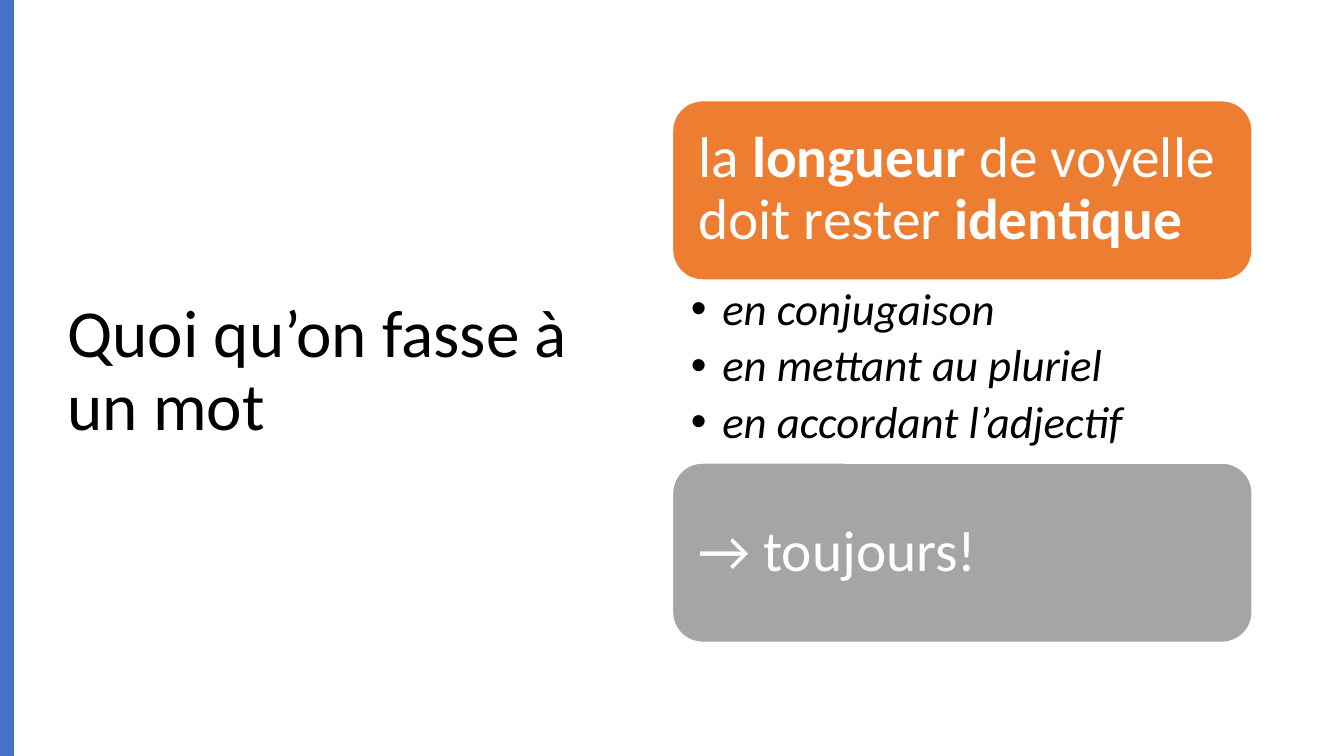
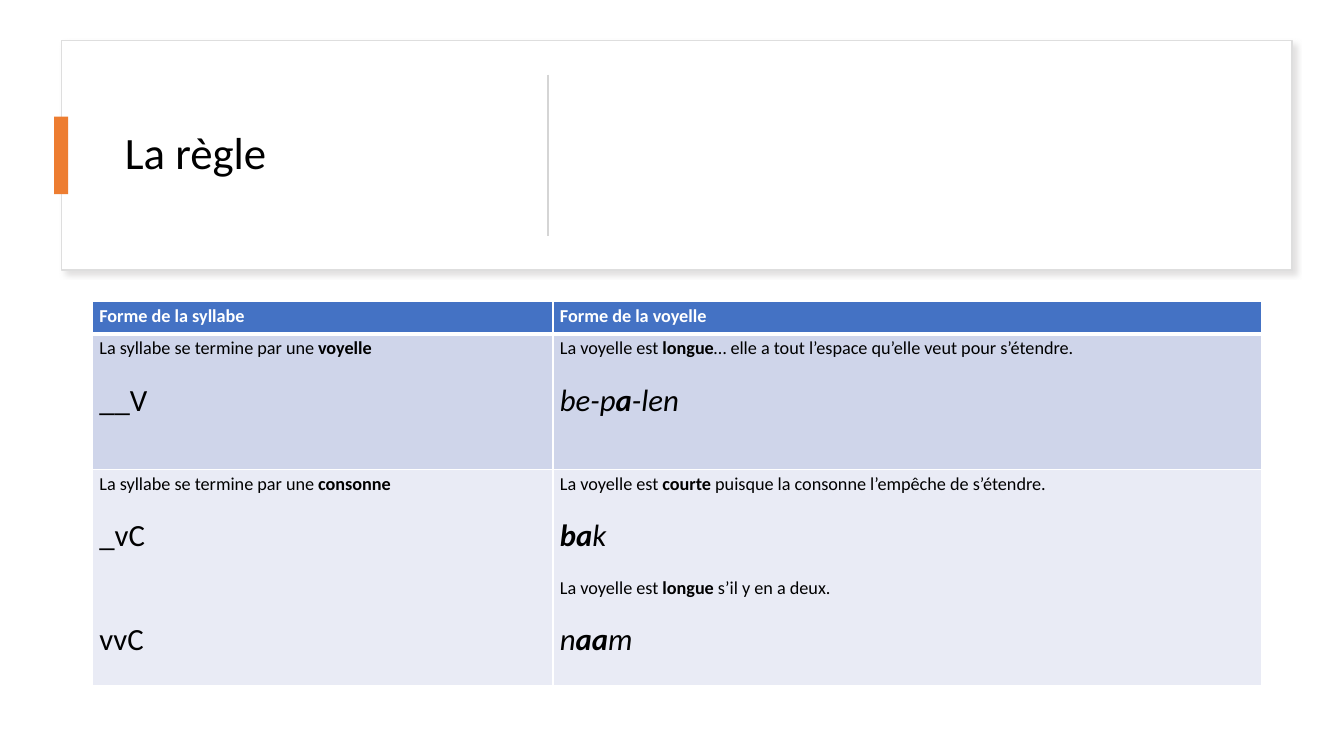
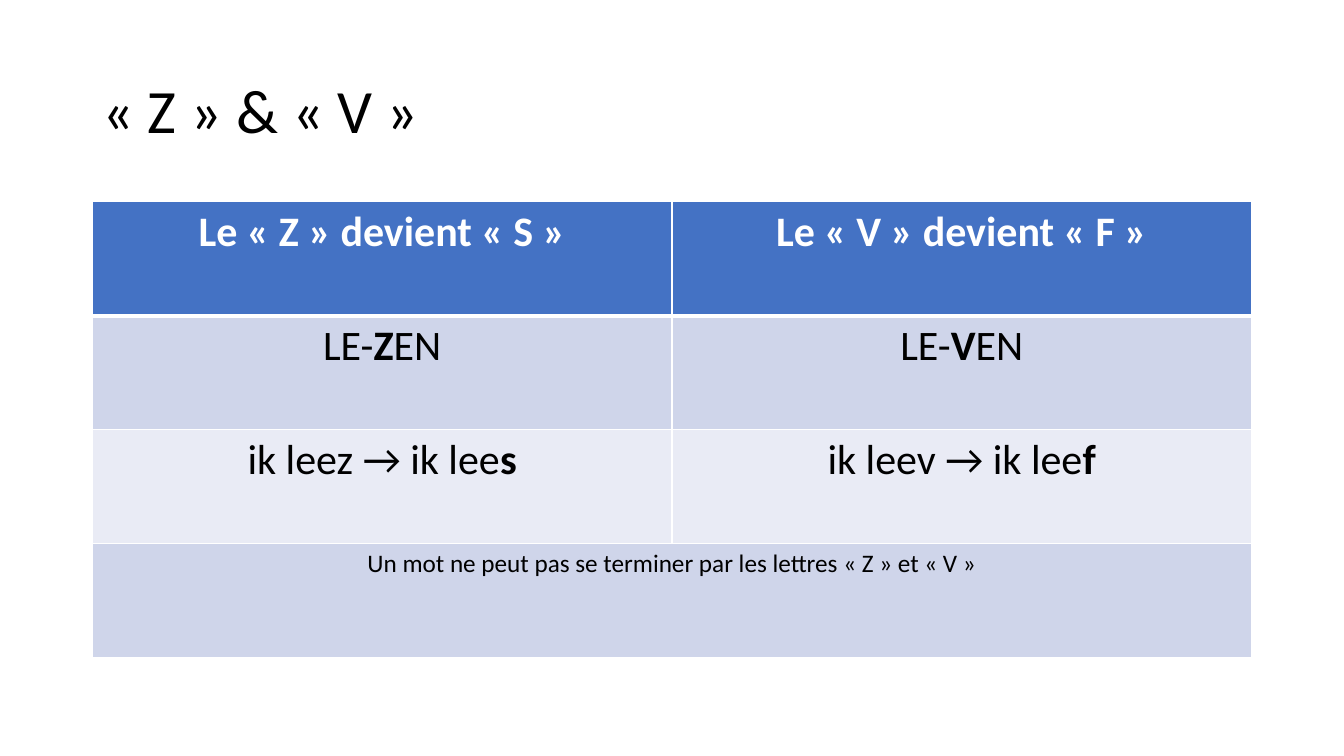
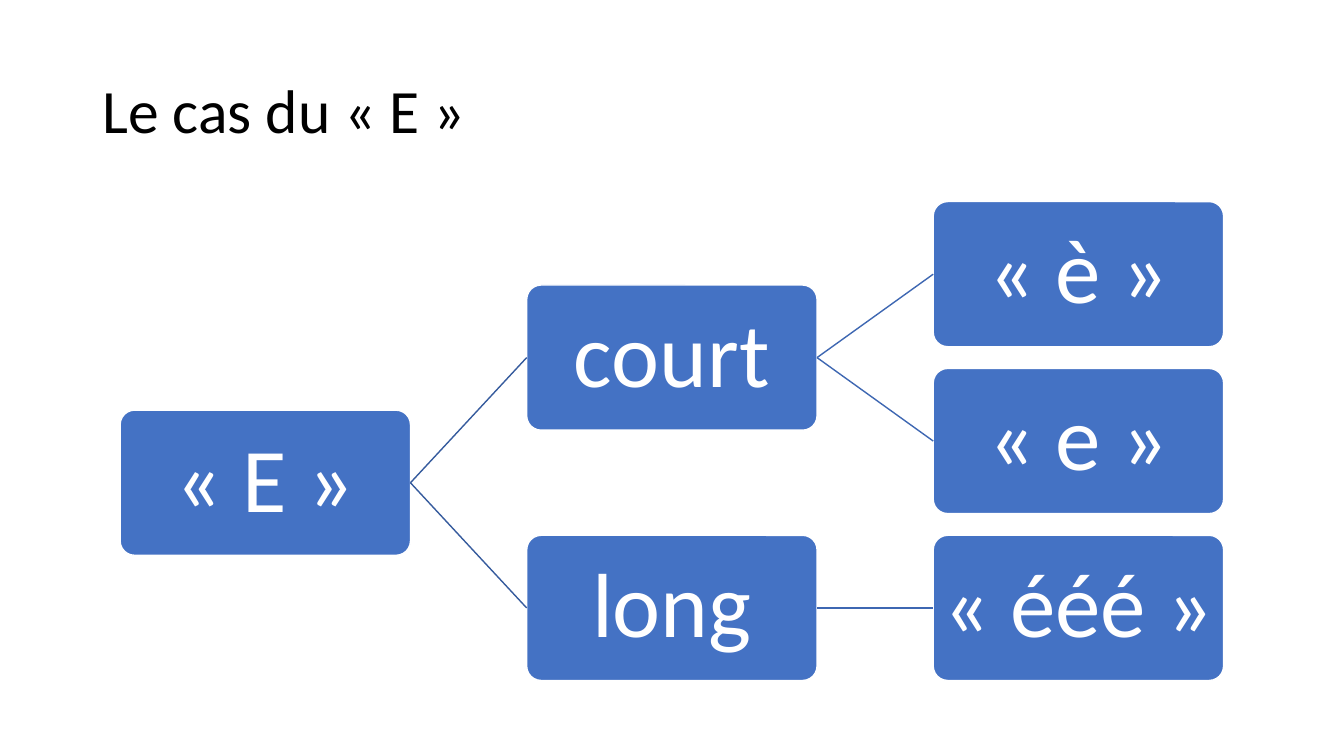
from lxml.etree import SubElement
from pptx import Presentation
from pptx.dml.color import RGBColor
from pptx.enum.shapes import MSO_CONNECTOR, MSO_SHAPE
from pptx.enum.text import MSO_ANCHOR, MSO_AUTO_SIZE, PP_ALIGN
from pptx.oxml.ns import qn
from pptx.util import Pt

FONT = "Calibri"
BLACK = RGBColor(0x00, 0x00, 0x00)
WHITE = RGBColor(0xFF, 0xFF, 0xFF)
BLUE = RGBColor(0x44, 0x72, 0xC4)
ORANGE = RGBColor(0xED, 0x7D, 0x31)
GRAY = RGBColor(0xA5, 0xA5, 0xA5)
CARD_EDGE = RGBColor(0xDE, 0xDE, 0xDE)
DIVIDER = RGBColor(0xD5, 0xD5, 0xD5)
SHADOW = RGBColor(0xC5, 0xC3, 0xC3)
BAND_DARK = RGBColor(0xCF, 0xD5, 0xEA)
BAND_LIGHT = RGBColor(0xE9, 0xEB, 0xF5)
BRANCH_COLORS = [RGBColor(0x36, 0x5B, 0x9D), RGBColor(0x3E, 0x67, 0xB2)]

SLIDE_WIDTH, SLIDE_HEIGHT = 960, 540
TITLE_BOX = (66, 28.8, 828, 104.4)
BLANK_LINE = 15.87

NODE_WIDTH, NODE_HEIGHT = 207.4, 103.7
TREE_LEFT, TREE_TOP = 85.8, 144
COLUMN_STEP, LEAF_STEP = 290.4, 119.2


def points(values):
    return [Pt(value) for value in values]


def assign(target, values):
    for name, value in values.items():
        setattr(target, name, value)


def write_para(para, text, size, color=BLACK, italic=False, bold=False, **layout):
    assign(para, layout)
    for index, part in enumerate(text.split("*")):
        if part:
            span = para.add_run()
            span.text = part
            assign(span.font, {"name": FONT, "size": Pt(size), "italic": italic,
                               "bold": bold or index % 2 == 1})
            span.font.color.rgb = color


def next_para(frame, index):
    return frame.add_paragraph() if index else frame.paragraphs[0]


def set_frame(frame, margins, anchor):
    left, top, right, bottom = points(margins)
    assign(frame, {"word_wrap": True, "auto_size": MSO_AUTO_SIZE.NONE,
                   "vertical_anchor": anchor, "margin_left": left, "margin_top": top,
                   "margin_right": right, "margin_bottom": bottom})


def add_page(deck, title, box=TITLE_BOX, size=44):
    page = deck.slides.add_slide(deck.slide_layouts[5])
    holder = page.shapes.title
    assign(holder, dict(zip(("left", "top", "width", "height"), points(box))))
    set_frame(holder.text_frame, (7.2, 3.6, 7.2, 3.6), MSO_ANCHOR.MIDDLE)
    write_para(holder.text_frame.paragraphs[0], title, size,
               alignment=PP_ALIGN.LEFT, line_spacing=0.9)
    return page


def add_block(page, box, fill, edge=None, kind=MSO_SHAPE.RECTANGLE):
    block = page.shapes.add_shape(kind, *points(box))
    block.shadow.inherit = False
    block.fill.solid()
    block.fill.fore_color.rgb = fill
    if edge is None:
        block.line.fill.background()
    else:
        block.line.color.rgb = edge
        block.line.width = Pt(1)
    return block


def add_panel(page, box, fill, text, size, margin, align, corner=None):
    panel = add_block(page, box, fill, WHITE, MSO_SHAPE.ROUNDED_RECTANGLE)
    if corner is not None:
        panel.adjustments[0] = corner
    set_frame(panel.text_frame, [margin] * 4, MSO_ANCHOR.MIDDLE)
    write_para(panel.text_frame.paragraphs[0], text, size, WHITE,
               alignment=align, line_spacing=0.9)
    return panel


def add_bullets(page, box, items):
    frame = page.shapes.add_textbox(*points(box)).text_frame
    set_frame(frame, (13, 4.3, 23, 4.3), MSO_ANCHOR.TOP)
    for index, item in enumerate(items):
        para = next_para(frame, index)
        write_para(para, item, 32, italic=True, line_spacing=0.9, space_after=Pt(5.6))
        properties = para._p.get_or_add_pPr()
        properties.set("marL", str(Pt(22.5)))
        properties.set("indent", str(-Pt(22.5)))
        SubElement(properties, qn("a:buFont"), typeface="Arial")
        SubElement(properties, qn("a:buChar"), char="•")


def add_line(page, start, end, color, width):
    line = page.shapes.add_connector(MSO_CONNECTOR.STRAIGHT, *points(start + end))
    line.line.color.rgb = color
    line.line.width = Pt(width)
    SubElement(line._element.spPr, qn("a:effectLst"))
    return line


def add_soft_shadow(shape):
    effects = shape._element.spPr.find(qn("a:effectLst"))
    shadow = SubElement(effects, qn("a:outerShdw"), blurRad=str(Pt(4)), dist=str(Pt(3)),
                        dir=str(45 * 60000), algn="tl", rotWithShape="0")
    color = SubElement(shadow, qn("a:srgbClr"), val=str(SHADOW))
    SubElement(color, qn("a:alpha"), val="50000")


def set_borders(cell, row):
    widths = {"a:lnL": 1, "a:lnR": 1, "a:lnT": 3 if row == 1 else 1,
              "a:lnB": 3 if row == 0 else 1}
    properties = cell._tc.get_or_add_tcPr()
    for tag, width in widths.items():
        edge = SubElement(properties, qn(tag), w=str(Pt(width)))
        fill = SubElement(edge, qn("a:solidFill"))
        SubElement(fill, qn("a:srgbClr"), val=str(WHITE))


def add_grid(page, corner, columns, rows, content, margins=(7.2, 3.6)):
    side, end = points(margins)
    size = (sum(columns), sum(rows))
    table = page.shapes.add_table(len(rows), len(columns), *points(corner + size)).table
    for column, width in zip(table.columns, columns):
        column.width = Pt(width)
    for index, (row, height) in enumerate(zip(table.rows, rows)):
        row.height = Pt(height)
        fill = BLUE if index == 0 else (BAND_LIGHT, BAND_DARK)[index % 2]
        for cell in row.cells:
            assign(cell, {"margin_left": side, "margin_right": side,
                          "margin_top": end, "margin_bottom": end})
            set_borders(cell, index)
            cell.fill.solid()
            cell.fill.fore_color.rgb = fill
        for cell, paras in zip(row.cells, content[index]):
            for number, values in enumerate(paras):
                write_para(next_para(cell.text_frame, number), **values)
    return table


def note(text, blanks=0):
    return {"text": text, "size": 13, "space_before": Pt(blanks * BLANK_LINE)}


def sample(text, blanks=1, italic=False):
    return {"text": text, "size": 22, "italic": italic,
            "space_before": Pt(blanks * BLANK_LINE)}


def heading(text, size, **layout):
    return [{"text": text, "size": size, "color": WHITE, "bold": True, **layout}]


def centred(text, size=30):
    return [{"text": text, "size": size, "alignment": PP_ALIGN.CENTER}]


def add_tree(page, label, children, level=0, first_leaf=0):
    branches, leaf = [], first_leaf
    for name, below in children:
        node, top, leaf = add_tree(page, name, below, level + 1, leaf)
        branches.append((node, top))
    if branches:
        top = sum(place for _, place in branches) / len(branches)
    else:
        top = TREE_TOP + LEAF_STEP * first_leaf
        leaf = first_leaf + 1
    left = TREE_LEFT + COLUMN_STEP * level
    parent = add_panel(page, (left, top, NODE_WIDTH, NODE_HEIGHT), BLUE, label, 65, 3.6,
                       PP_ALIGN.CENTER, 0.1)
    for node, _ in branches:
        branch = add_line(page, (0, 0), (0, 0), BRANCH_COLORS[level], 1)
        branch.begin_connect(parent, 3)
        branch.end_connect(node, 1)
    return parent, top, leaf


def build_principle(deck):
    page = add_page(deck, "Quoi qu’on fasse à un mot", (41, 49, 408, 433.4), 48)
    add_block(page, (0, 0, 10, SLIDE_HEIGHT), BLUE)
    left, width, height = 480.4, 414, 128
    panels = [(72, ORANGE, "la *longueur* de voyelle doit rester *identique*"),
              (330.8, GRAY, "→ toujours!")]
    for top, fill, text in panels:
        add_panel(page, (left, top, width, height), fill, text, 41, 12.2, PP_ALIGN.LEFT)
    add_bullets(page, (left, 200.6, width, 130),
                ["en conjugaison", "en mettant au pluriel", "en accordant l’adjectif"])


def build_rule(deck):
    page = add_page(deck, "La règle", (82, 46, 280, 130), 32)
    card = add_block(page, (44, 29, 879, 164), WHITE, CARD_EDGE)
    add_soft_shadow(card)
    page.shapes.title.element.addprevious(card.element)
    add_block(page, (38.6, 83.4, 10, 55.4), ORANGE)
    add_line(page, (391.6, 53.4), (391.6, 168.6), DIVIDER, 1.4)
    content = [
        [heading("Forme de la syllabe", 13), heading("Forme de la voyelle", 13)],
        [[note("La syllabe se termine par une *voyelle*"), sample("__V")],
         [note("La voyelle est *longue*… elle a tout l’espace qu’elle veut pour s’étendre."),
          sample("be-p*a*-len", italic=True)]],
        [[note("La syllabe se termine par une *consonne*"), sample("_vC"),
          sample("vvC", blanks=3)],
         [note("La voyelle est *courte* puisque la consonne l’empêche de s’étendre."),
          sample("*ba*k", italic=True),
          note("La voyelle est *longue* s’il y en a deux.", blanks=1),
          sample("n*aa*m", italic=True)]],
    ]
    add_grid(page, (66, 215.4), (329, 506), (23, 96.7, 154.5), content, (5, 2.7))


def build_final_letters(deck):
    page = add_page(deck, "« Z » & « V »")
    content = [
        [heading("Le « Z » devient « S »", 30, alignment=PP_ALIGN.CENTER),
         heading("Le « V » devient « F »", 30, alignment=PP_ALIGN.CENTER)],
        [centred("LE-*Z*EN"), centred("LE-*V*EN")],
        [centred("ik leez → ik lee*s*"), centred("ik leev → ik lee*f*")],
        [centred("Un mot ne peut pas se terminer par les lettres « Z » et « V »", 18)],
    ]
    table = add_grid(page, (66, 144), (414, 414), [81.5] * 4, content)
    table.cell(3, 0).merge(table.cell(3, 1))


def build_letter_e(deck):
    page = add_page(deck, "Le cas du « E »")
    add_tree(page, "« E »", [("court", [("« è »", []), ("« e »", [])]),
                             ("long", [("« ééé »", [])])])


def main():
    deck = Presentation()
    deck.slide_width, deck.slide_height = points((SLIDE_WIDTH, SLIDE_HEIGHT))
    for build in (build_principle, build_rule, build_final_letters, build_letter_e):
        build(deck)
    deck.save("out.pptx")


if __name__ == "__main__":
    main()
